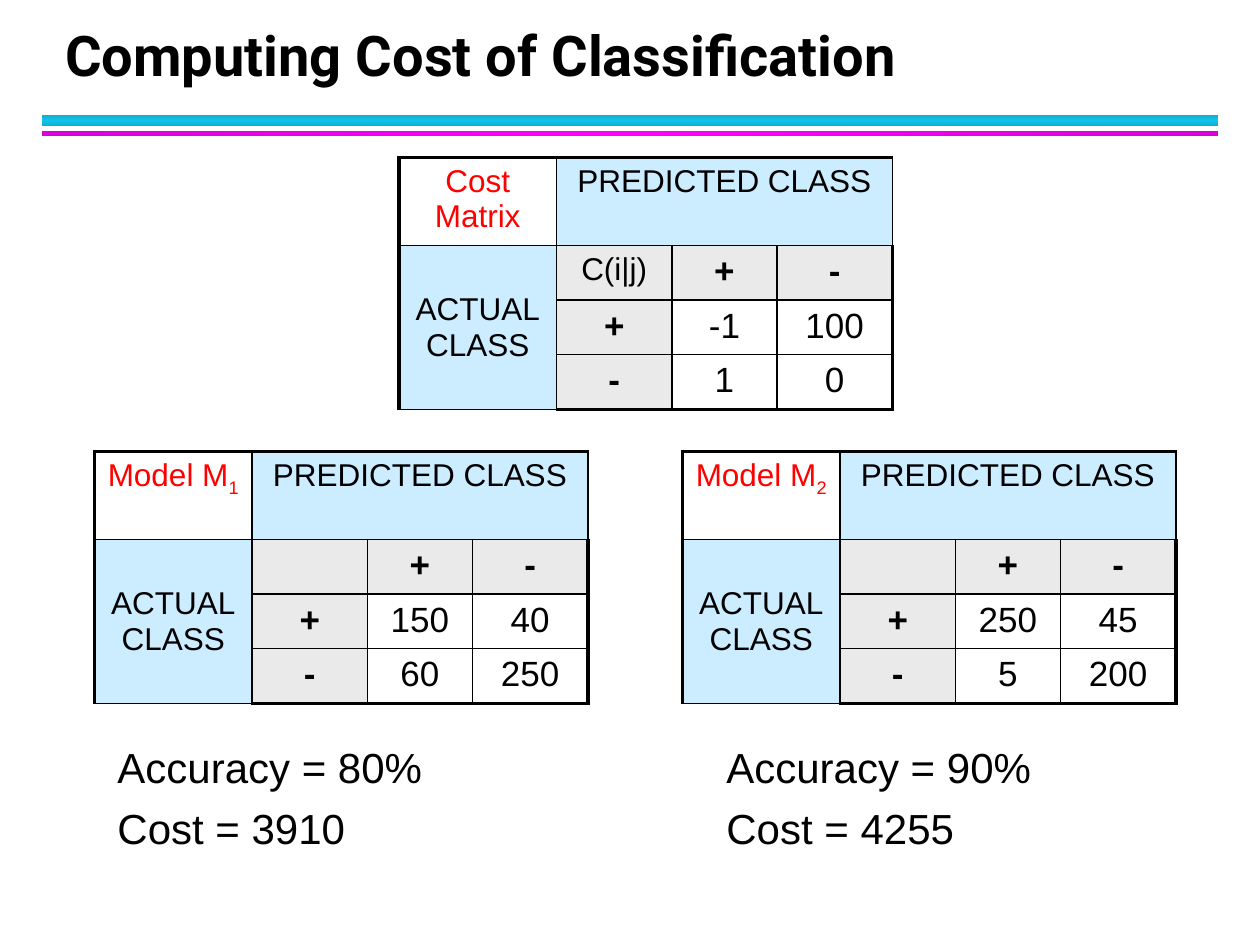
import pptx
import pptx.util
import pptx.dml.color
import pptx.enum.shapes
import pptx.enum.text
import pptx.oxml
import pptx.oxml.ns

Pt = pptx.util.Pt
RGB = pptx.dml.color.RGBColor
ALIGN = pptx.enum.text.PP_ALIGN
ANCHOR = pptx.enum.text.MSO_ANCHOR

BLACK = RGB(0x00, 0x00, 0x00)
RED = RGB(0xFF, 0x00, 0x00)
BLUE = RGB(0xCC, 0xEC, 0xFF)
GREY = RGB(0xEA, 0xEA, 0xEA)

# Content
TITLE = "Computing Cost of Classification"
# left, top, heading, subscript, corner label, counts
MATRICES = [
    (228, 90, "Cost Matrix", "", "C(i|j)", [["-1", "100"], ["1", "0"]]),
    (54, 258, "Model M", "1", "", [["150", "40"], ["60", "250"]]),
    (390, 258, "Model M", "2", "", [["250", "45"], ["5", "200"]]),
]
RESULTS = [
    (60, ["Accuracy = 80%", "Cost = 3910"]),
    (408, ["Accuracy = 90%", "Cost = 4255"]),
]
# top, height, edge colour, middle colour, angle in degrees
RULES = [
    (66, 6, "10B0D3", "12C2E9", 90),
    (75, 3, "DA00DA", "FF00FF", 0),
]
COL_WIDTHS = [90, 66, 60, 66]
ROW_HEIGHTS = [50.4, 31.1, 31.1, 31.4]
THIN, THICK = 1, 2.25


def style(r, size, color=BLACK, bold=False, font="Arial"):
    r.font.size, r.font.bold, r.font.name = Pt(size), bold, font
    r.font.color.rgb = color


def add_rule(s, top, height, edge, middle, angle):
    bar = s.shapes.add_shape(pptx.enum.shapes.MSO_SHAPE.RECTANGLE,
                             Pt(24), Pt(top), Pt(672), Pt(height))
    bar.shadow.inherit = False
    bar.line.fill.background()
    stops = "".join(
        f'<a:gs pos="{pos}"><a:srgbClr val="{c}"/></a:gs>'
        for pos, c in ((0, edge), (50000, middle), (100000, edge)))
    bar.fill.gradient()
    old = bar._element.spPr.find(pptx.oxml.ns.qn("a:gradFill"))
    new = pptx.oxml.parse_xml(
        f'<a:gradFill {pptx.oxml.ns.nsdecls("a")} rotWithShape="1">'
        f'<a:gsLst>{stops}</a:gsLst>'
        f'<a:lin ang="{angle * 60000}" scaled="0"/></a:gradFill>')
    old.getparent().replace(old, new)


def set_borders(cell, row, col):
    outer = {"L": col == 0, "R": col == 3, "T": row == 0, "B": row == 3}
    tcPr = cell._tc.get_or_add_tcPr()
    for i, (side, is_outer) in enumerate(outer.items()):
        width = int(Pt(THICK if is_outer else THIN))
        tcPr.insert(i, pptx.oxml.parse_xml(
            f'<a:ln{side} {pptx.oxml.ns.nsdecls("a")} w="{width}"><a:solidFill>'
            f'<a:srgbClr val="{BLACK}"/></a:solidFill></a:ln{side}>'))


def add_matrix(s, left, top, heading, subscript, corner, counts):
    table = s.shapes.add_table(4, 4, Pt(left), Pt(top), Pt(sum(COL_WIDTHS)),
                               Pt(sum(ROW_HEIGHTS))).table
    table.first_row = table.horz_banding = False
    for column, width in zip(table.columns, COL_WIDTHS):
        column.width = Pt(width)
    for table_row, height in zip(table.rows, ROW_HEIGHTS):
        table_row.height = Pt(height)

    texts = [
        [heading, "PREDICTED CLASS", "", ""],
        ["ACTUAL\vCLASS", corner, "+", "-"],
        ["", "+", *counts[0]],
        ["", "-", *counts[1]],
    ]
    for row, line in enumerate(texts):
        for col, text in enumerate(line):
            cell = table.cell(row, col)
            label = row == 0 or col == 0
            if row == col == 0 or min(row, col) > 1:
                cell.fill.background()
            else:
                cell.fill.solid()
                cell.fill.fore_color.rgb = BLUE if label else GREY
            set_borders(cell, row, col)
            p = cell.text_frame.paragraphs[0]
            p.alignment = ALIGN.CENTER
            p.text = text
            for r in p.runs:
                style(r, 18 if label or text == corner else 20,
                      RED if row == col == 0 else BLACK, text in ("+", "-"))

    if subscript:
        r = table.cell(0, 0).text_frame.paragraphs[0].add_run()
        r.text = subscript
        style(r, 18, RED)
        r._r.get_or_add_rPr().set("baseline", "-25000")
    table.cell(0, 1).merge(table.cell(0, 3))
    table.cell(1, 0).merge(table.cell(3, 0))
    table.cell(1, 0).vertical_anchor = ANCHOR.MIDDLE


def add_results(s, left, lines):
    tf = s.shapes.add_textbox(Pt(left), Pt(420), Pt(240), Pt(78)).text_frame
    tf.word_wrap = True
    tf.text = "\n".join(lines)
    for p in tf.paragraphs:
        p.space_before, p.space_after = Pt(2.4), Pt(4)
        style(p.runs[0], 24)


def main():
    prs = pptx.Presentation()
    prs.slide_width, prs.slide_height = Pt(720), Pt(540)
    s = prs.slides.add_slide(prs.slide_layouts[5])

    # Title and the rules below it
    title = s.shapes.title
    title.left, title.top, title.width, title.height = Pt(30), Pt(12), Pt(652), Pt(42)
    tf = title.text_frame
    tf.text = TITLE
    tf.vertical_anchor = ANCHOR.BOTTOM
    p = tf.paragraphs[0]
    p.alignment, p.line_spacing = ALIGN.LEFT, Pt(36)
    style(p.runs[0], 32, bold=True, font="Roboto")
    for rule in RULES:
        add_rule(s, *rule)

    # Matrices and the results of each model
    for matrix in MATRICES:
        add_matrix(s, *matrix)
    for left, lines in RESULTS:
        add_results(s, left, lines)

    prs.save("out.pptx")


if __name__ == "__main__":
    main()
